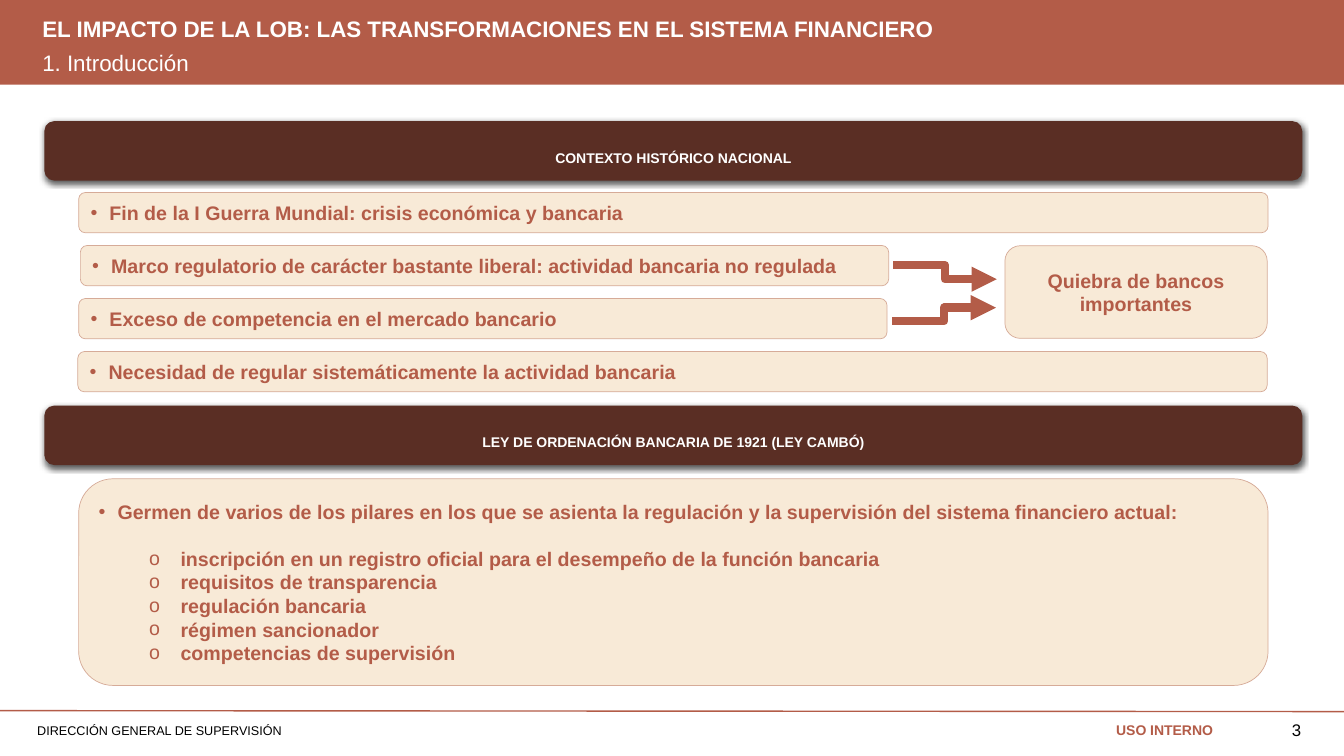
from lxml.etree import SubElement
from pptx import Presentation
from pptx.dml.color import RGBColor
from pptx.enum.shapes import MSO_CONNECTOR, MSO_SHAPE
from pptx.enum.text import MSO_ANCHOR, MSO_AUTO_SIZE, PP_ALIGN
from pptx.oxml import parse_xml
from pptx.oxml.ns import nsdecls, qn
from pptx.util import Pt

RUST, BROWN, CREAM, EDGE = "B35C48", "5A2E24", "F8EAD7", "D6AB98"
WHITE, BLACK = "FFFFFF", "000000"
hue = RGBColor.from_string


def panel(kind, x, y, w, h, fill, edge=None):
    shape = slide.shapes.add_shape(kind, Pt(x), Pt(y), Pt(w), Pt(h))
    shape.shadow.inherit = False
    shape.fill.solid()
    shape.fill.fore_color.rgb = hue(fill)
    if edge:
        shape.line.color.rgb = hue(edge)
        shape.line.width = Pt(0.5)
    else:
        shape.line.fill.background()
    shape.text_frame.word_wrap = True
    shape.text_frame.vertical_anchor = MSO_ANCHOR.MIDDLE
    return shape


def write(para, text, size, color, bold=False, align=PP_ALIGN.LEFT):
    para.alignment = align
    run = para.add_run()
    run.text = text
    font = run.font
    font.name, font.size, font.bold = "Arial", Pt(size), bold
    font.color.rgb = hue(color)


deck = Presentation()
deck.slide_width, deck.slide_height = Pt(960), Pt(540)
slide = deck.slides.add_slide(deck.slide_layouts[4])

# Header band, behind the title
band = panel(MSO_SHAPE.RECTANGLE, 0, 0, 960, 60.5, RUST)
slide.shapes._spTree.insert(2, band._element)

# Title, subtitle and footer
holders = {item.placeholder_format.idx: item for item in slide.placeholders}
for idx in (2, 4):
    holders[idx].element.getparent().remove(holders[idx].element)
heads = [
    (0, 10.8, 669, 22.3, "EL IMPACTO DE LA LOB: LAS TRANSFORMACIONES EN EL SISTEMA FINANCIERO",
     16, WHITE, True, 23, MSO_ANCHOR.MIDDLE),
    (1, 34.6, 669, 22.3, "1. Introducción", 16, WHITE, False, 23, MSO_ANCHOR.MIDDLE),
    (3, 514, 562, 20, "DIRECCIÓN GENERAL DE SUPERVISIÓN", 9, BLACK, False, 19.4, MSO_ANCHOR.TOP),
]
for idx, y, w, h, text, size, color, bold, x, anchor in heads:
    item = holders[idx]
    item.left, item.top, item.width, item.height = Pt(x), Pt(y), Pt(w), Pt(h)
    frame = item.text_frame
    frame.auto_size = MSO_AUTO_SIZE.NONE
    frame.vertical_anchor = anchor
    para = frame.paragraphs[0]
    para.line_spacing, para.space_before = 0.9, Pt(0)
    write(para, text, size, color, bold)

# Footer notes on the right
notes = [
    (880, 510.5, 49.5, 24, "3", 12, BLACK, False, 0),
    (707, 512, 166.5, 23, "USO INTERNO", 10, RUST, True, 7.2),
]
for x, y, w, h, text, size, color, bold, inset in notes:
    frame = slide.shapes.add_textbox(Pt(x), Pt(y), Pt(w), Pt(h)).text_frame
    frame.word_wrap = True
    frame.margin_right = Pt(inset)
    write(frame.paragraphs[0], text, size, color, bold, PP_ALIGN.RIGHT)

# Section banners
for y, text in [(86.5, "CONTEXTO HISTÓRICO NACIONAL"),
                (289.7, "LEY DE ORDENACIÓN BANCARIA DE 1921 (LEY CAMBÓ)")]:
    banner = panel(MSO_SHAPE.ROUNDED_RECTANGLE, 31.7, y, 898.5, 42.5, BROWN)
    glow = banner._element.spPr.find(qn("a:effectLst"))
    glow.append(parse_xml(
        f'<a:outerShdw {nsdecls("a")} blurRad="{Pt(4.5)}" dist="{Pt(1.5)}" dir="5400000" '
        'rotWithShape="0"><a:srgbClr val="000000"><a:alpha val="63000"/></a:srgbClr>'
        '</a:outerShdw>'))
    para = banner.text_frame.paragraphs[0]
    para.line_spacing, para.space_after = Pt(21.6), Pt(4.3)
    write(para, text, 10, WHITE, True, PP_ALIGN.CENTER)

# Bulleted panels: four rows at an even step, then the law's pillars
facts = [
    (56.2, 849.6, "Fin de la I Guerra Mundial: crisis económica y bancaria"),
    (57.4, 577.4, "Marco regulatorio de carácter bastante liberal: actividad bancaria no regulada"),
    (56.2, 577.4, "Exceso de competencia en el mercado bancario"),
    (55.6, 849.6, "Necesidad de regular sistemáticamente la actividad bancaria"),
]
lists = [(x, 137.5 + 37.87 * row, w, 28.8, [text])
         for row, (x, w, text) in enumerate(facts)]
lists.append((56.2, 342, 849.6, 147.6, [
    "Germen de varios de los pilares en los que se asienta la regulación y la supervisión "
    "del sistema financiero actual:",
    "inscripción en un registro oficial para el desempeño de la función bancaria",
    "requisitos de transparencia",
    "regulación bancaria",
    "régimen sancionador",
    "competencias de supervisión",
]))
marks = [("•", 13.5, 13.5), ("o", 58.5, 22.5)]
for x, y, w, h, lines in lists:
    frame = panel(MSO_SHAPE.ROUNDED_RECTANGLE, x, y, w, h, CREAM, EDGE).text_frame
    for num, text in enumerate(lines):
        para = frame.add_paragraph() if num else frame.paragraphs[0]
        para.level = min(num, 1)
        mark, left, hang = marks[para.level]
        props = para._p.get_or_add_pPr()
        props.set("marL", str(Pt(left)))
        props.set("indent", str(-Pt(hang)))
        SubElement(props, qn("a:buFont")).set("typeface", "Arial")
        SubElement(props, qn("a:buChar")).set("char", mark)
        if num == 1:
            para.space_before = Pt(16.8)
        write(para, text, 14, RUST, True, PP_ALIGN.JUSTIFY)

# Outcome and the arrows that lead to it
fail = panel(MSO_SHAPE.ROUNDED_RECTANGLE, 717.8, 175.5, 187.4, 66.2, CREAM, EDGE)
write(fail.text_frame.paragraphs[0], "Quiebra de bancos importantes", 14, RUST, True,
      PP_ALIGN.CENTER)

ties = [
    (MSO_CONNECTOR.STRAIGHT, 0, 507.6, 960, 508.3, 1),
    (MSO_CONNECTOR.ELBOW, 637.9, 189.4, 712, 199.4, 6),
    (MSO_CONNECTOR.ELBOW, 637.2, 229.4, 711.4, 219.8, 6),
]
for kind, x, y, right, end, width in ties:
    tie = slide.shapes.add_connector(kind, Pt(x), Pt(y), Pt(right), Pt(end))
    tie.line.color.rgb = hue(RUST)
    tie.line.width = Pt(width)
    if kind == MSO_CONNECTOR.ELBOW:
        SubElement(tie.line._get_or_add_ln(), qn("a:tailEnd")).set("type", "triangle")
    SubElement(tie._element.spPr, qn("a:effectLst"))

deck.save("out.pptx")
